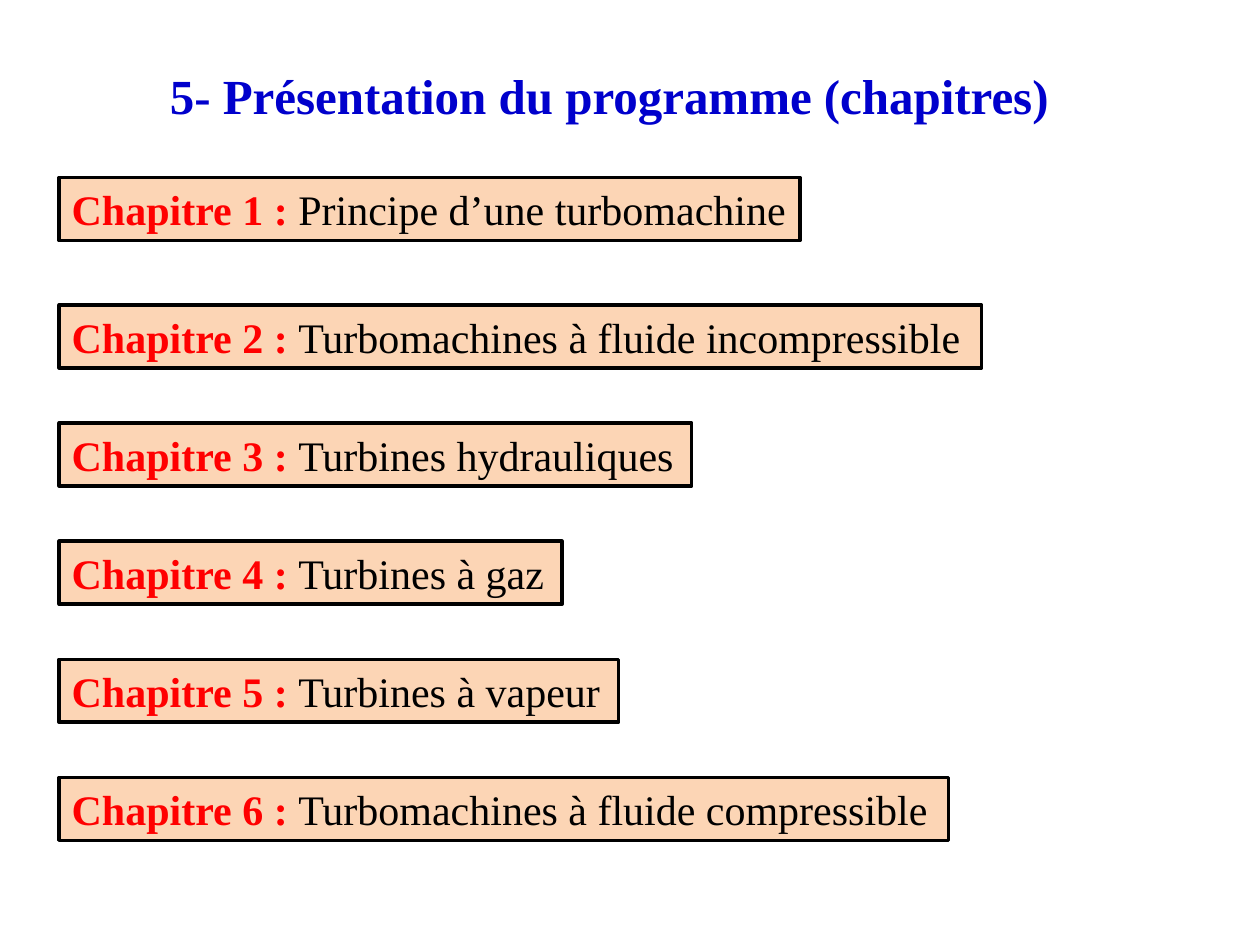
from pptx import Presentation
from pptx.dml.color import RGBColor
from pptx.enum.shapes import MSO_SHAPE
from pptx.enum.text import MSO_ANCHOR, PP_ALIGN
from pptx.util import Inches, Pt

RECT = MSO_SHAPE.RECTANGLE
MIDDLE = MSO_ANCHOR.MIDDLE
LEFT = PP_ALIGN.LEFT

FONT = "Times New Roman"
BLUE, RED, BLACK, PEACH = "0000CC", "FF0000", "000000", "FCD5B5"

TITLE = "5- Présentation du programme (chapitres)"
# chapter name, box width
CHAPTERS = [
    ("Principe d’une turbomachine", 5.88),
    ("Turbomachines à fluide incompressible", 7.32),
    ("Turbines hydrauliques", 5.02),
    ("Turbines à gaz", 3.99),
    ("Turbines à vapeur", 4.44),
    ("Turbomachines à fluide compressible", 7.06),
]
EDGE, HEIGHT = 0.47, 0.5
FIRST, SECOND, STEP = 1.41, 2.42, 0.9375


def rgb(code):
    return RGBColor.from_string(code)


def write(par, text, size=24, color=BLACK, bold=False):
    run = par.add_run()
    run.text = text
    run.font.name = FONT
    run.font.size = Pt(size)
    run.font.bold = bold
    run.font.color.rgb = rgb(color)


def add_chapter(slide, number, name, top, width):
    box = slide.shapes.add_shape(
        RECT, Inches(EDGE), Inches(top), Inches(width), Inches(HEIGHT))
    box.shadow.inherit = False
    box.fill.solid()
    box.fill.fore_color.rgb = rgb(PEACH)
    box.line.color.rgb = rgb(BLACK)
    box.line.width = Pt(2)
    frame = box.text_frame
    frame.word_wrap = True
    frame.vertical_anchor = MIDDLE
    par = frame.paragraphs[0]
    par.alignment = LEFT
    write(par, f"Chapitre {number} : ", color=RED, bold=True)
    write(par, name)


def main():
    deck = Presentation()
    deck.slide_width, deck.slide_height = Inches(10), Inches(7.5)
    slide = deck.slides.add_slide(deck.slide_layouts[6])

    title = slide.shapes.add_textbox(
        Inches(1.25), Inches(0.47), Inches(7.26), Inches(0.57))
    title.text_frame.word_wrap = True
    write(title.text_frame.paragraphs[0], TITLE, size=28, color=BLUE, bold=True)

    for i, (name, width) in enumerate(CHAPTERS):
        top = SECOND + (i - 1) * STEP if i else FIRST
        add_chapter(slide, i + 1, name, top, width)

    deck.save("out.pptx")


if __name__ == "__main__":
    main()
